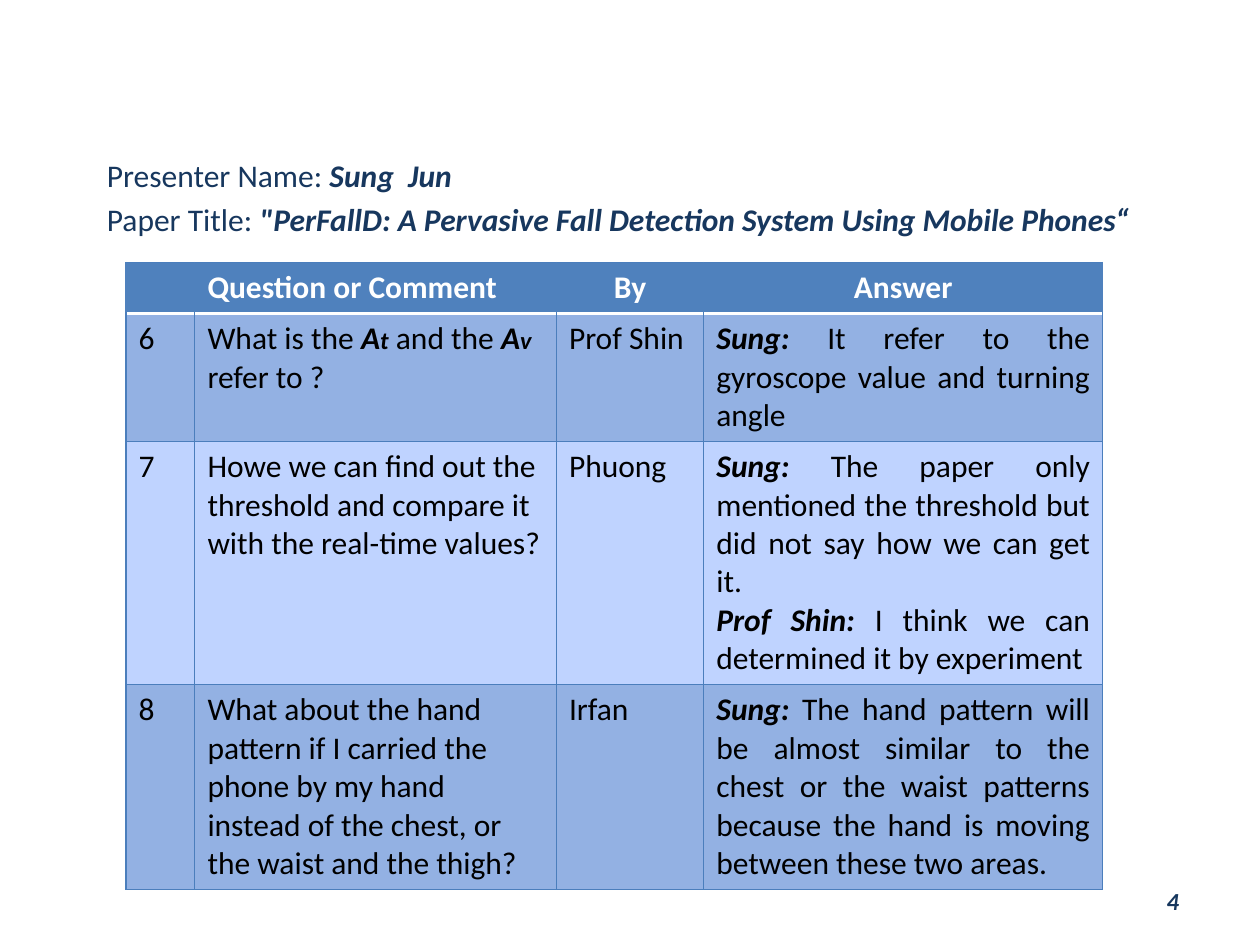
from lxml import etree
from pptx import Presentation
from pptx.dml.color import RGBColor
from pptx.enum.text import MSO_ANCHOR, PP_ALIGN
from pptx.oxml.ns import qn
from pptx.util import Pt

LEFT, CENTER, RIGHT, JUSTIFY = PP_ALIGN.LEFT, PP_ALIGN.CENTER, PP_ALIGN.RIGHT, PP_ALIGN.JUSTIFY
MIDDLE = MSO_ANCHOR.MIDDLE
COLORS = {"navy": "17375E", "header": "4F81BD", "dark_row": "93B1E3", "light_row": "BFD3FF",
          "grid": "4B7EBC", "white": "FFFFFF", "black": "000000"}


def add_run(paragraph, text, color, bold=False, italic=False, size=18):
    run = paragraph.add_run()
    run.text = text
    font = run.font
    font.name, font.size, font.bold, font.italic = "Calibri", Pt(size), bold, italic
    font.color.rgb = RGBColor.from_string(COLORS[color])


def add_border(cell, position, side, color, width):
    line = etree.Element(qn("a:" + side), w=str(Pt(width)))
    fill = etree.SubElement(line, qn("a:solidFill"))
    etree.SubElement(fill, qn("a:srgbClr"), val=COLORS[color])
    cell._tc.get_or_add_tcPr().insert(position, line)


prs = Presentation()
prs.slide_width, prs.slide_height = Pt(720), Pt(540)
slide = prs.slides.add_slide(prs.slide_layouts[6])

# Presenter and paper title
heading = slide.shapes.add_textbox(Pt(54), Pt(60), Pt(624), Pt(90)).text_frame
heading.word_wrap = True
heading.margin_top = Pt(29)
details = [("Presenter Name: ", "Sung  Jun"),
           ("Paper Title: ", "\"PerFallD: A Pervasive Fall Detection System Using Mobile Phones“")]
for i, (label, value) in enumerate(details):
    paragraph = heading.add_paragraph() if i else heading.paragraphs[0]
    if i:
        paragraph.space_before = Pt(3.6)
    add_run(paragraph, label, "navy")
    add_run(paragraph, value, "navy", bold=True, italic=True)

# Questions: each cell is a list of paragraphs, each paragraph a list of (text, emphasis, size)
headers = ["", "Question or Comment", "By", "Answer"]
header_row = [[[(text, False, 18)]] if text else [] for text in headers]
question_rows = [
    ("6",
     [("What is the ", False, 18), ("A", True, 18), ("t", True, 14), (" ", True, 18),
      ("and the ", False, 18), ("A", True, 18), ("v", True, 14), (" ", True, 18),
      ("refer to ?", False, 18)],
     "Prof Shin",
     [("Sung: ", "It refer to the gyroscope value and turning angle")]),
    ("7",
     [("Howe we can find out the threshold and compare it with the real-time values?", False, 18)],
     "Phuong",
     [("Sung: ", "The paper only mentioned the threshold but did not say how we can get it."),
      ("Prof Shin: ", "I think we can determined it by experiment")]),
    ("8",
     [("What about the hand pattern if I carried the phone by my hand instead of the chest, "
       "or the waist and the thigh?", False, 18)],
     "Irfan",
     [("Sung: ", "The hand pattern will be almost similar to the chest or the waist patterns "
       "because the hand is moving between these two areas.")]),
]
table_rows = [header_row]
for number, question, asker, answers in question_rows:
    replies = [[(speaker, True, 18), (reply, False, 18)] for speaker, reply in answers]
    table_rows.append([[[(number, False, 18)]], [question], [[(asker, False, 18)]], replies])

column_widths = [39.4, 206.6, 84.2, 228]
row_heights = [29.2, 73, 139, 117]
row_fills = ["header", "dark_row", "light_row", "dark_row"]
header_aligns = [LEFT, LEFT, CENTER, CENTER]
body_aligns = [LEFT, LEFT, LEFT, JUSTIFY]

# Question table
questions = slide.shapes.add_table(4, 4, Pt(72), Pt(150), Pt(sum(column_widths)),
                                   Pt(sum(row_heights))).table
for column, width in zip(questions.columns, column_widths):
    column.width = Pt(width)
for r, cells in enumerate(table_rows):
    questions.rows[r].height = Pt(row_heights[r])
    for c, paragraphs in enumerate(cells):
        cell = questions.cell(r, c)
        cell.fill.solid()
        cell.fill.fore_color.rgb = RGBColor.from_string(COLORS[row_fills[r]])
        side_color = "grid" if r else "header"
        top = ("white", 2) if r == 1 else ("grid", 0.75)
        bottom = ("grid", 0.75) if r else ("white", 2)
        add_border(cell, 0, "lnL", side_color, 0.75)
        add_border(cell, 1, "lnR", side_color, 0.75)
        add_border(cell, 2, "lnT", *top)
        add_border(cell, 3, "lnB", *bottom)
        for i, runs in enumerate(paragraphs):
            frame = cell.text_frame
            paragraph = frame.add_paragraph() if i else frame.paragraphs[0]
            paragraph.alignment = body_aligns[c] if r else header_aligns[c]
            for text, emphasis, size in runs:
                add_run(paragraph, text, "black" if r else "white",
                        bold=emphasis or r == 0, italic=emphasis, size=size)

# Page number
page_number = slide.shapes.add_textbox(Pt(516), Pt(500.4), Pt(168), Pt(28.8)).text_frame
page_number.word_wrap = True
page_number.vertical_anchor = MIDDLE
page_number.paragraphs[0].alignment = RIGHT
add_run(page_number.paragraphs[0], "4 ", "navy", bold=True, italic=True, size=14)

prs.save("out.pptx")
